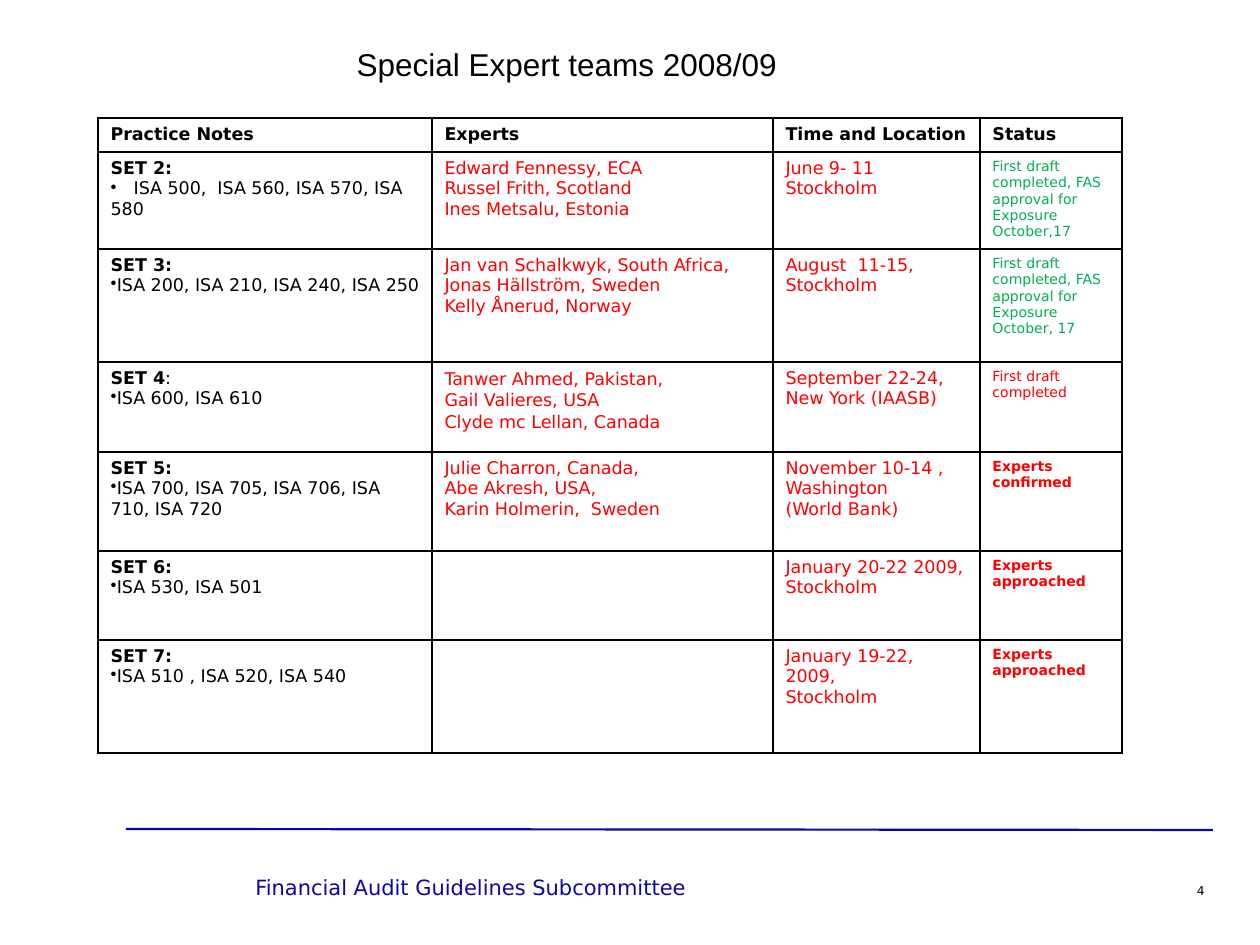
from dataclasses import dataclass
from lxml.etree import SubElement as Sub
from pptx import Presentation
from pptx.dml.color import RGBColor as RGB
from pptx.enum.shapes import MSO_CONNECTOR as Conn
from pptx.enum.text import MSO_ANCHOR as Anchor, MSO_AUTO_SIZE as Auto, PP_ALIGN as Align
from pptx.oxml.ns import qn
from pptx.util import Pt

PX = 914400 // 126


@dataclass(frozen=True)
class Theme:
    black: str = "000000"
    red: str = "FF0000"
    green: str = "00B050"
    navy: str = "0A08A1"
    head: str = "Arial"
    body: str = "DejaVu Sans"
    title: int = 18
    foot: int = 12
    text: int = 10
    note: int = 8
    page: int = 7


T = Theme()
COLS = [334, 341, 207, 142]
ROWS = [34, 97, 113, 90, 99, 89, 113]
HEADS = ["Practice Notes", "Experts", "Time and Location", "Status"]
DRAFT = "First draft completed"
SETS = [
    ("SET 2:", "\tISA 500,  ISA 560, ISA 570, ISA 580",
     ["Edward Fennessy, ECA", "Russel Frith, Scotland", "Ines Metsalu, Estonia"],
     ["June 9- 11 Stockholm"],
     DRAFT + ", FAS approval for Exposure October,17", T.green, False),
    ("SET 3:", "ISA 200, ISA 210, ISA 240, ISA 250",
     ["Jan van Schalkwyk, South Africa,", "Jonas Hällström, Sweden", "Kelly Ånerud, Norway"],
     ["August  11-15,", "Stockholm"],
     DRAFT + ", FAS approval for Exposure October, 17", T.green, False),
    ("SET 4:", "ISA 600, ISA 610",
     ["Tanwer Ahmed, Pakistan,", "Gail Valieres, USA", "Clyde mc Lellan, Canada"],
     ["September 22-24,", "New York (IAASB)"],
     DRAFT, T.red, False),
    ("SET 5:", "ISA 700, ISA 705, ISA 706, ISA 710, ISA 720",
     ["Julie Charron, Canada,", "Abe Akresh, USA,", "Karin Holmerin,  Sweden"],
     ["November 10-14 ,", "Washington", "(World Bank)"],
     "Experts confirmed", T.red, True),
    ("SET 6:", "ISA 530, ISA 501", [],
     ["January 20-22 2009,", "Stockholm"],
     "Experts approached", T.red, True),
    ("SET 7:", "ISA 510 , ISA 520, ISA 540", [],
     ["January 19-22, 2009,", "Stockholm"],
     "Experts approached", T.red, True),
]


def style(para, size, color=T.black, bold=False, face=T.body):
    font = para.font
    font.size, font.bold, font.name = Pt(size), bold, face
    font.color.rgb = RGB.from_string(color)


def fill(frame, lines, size=T.text, color=T.black, bold=False):
    for i, line in enumerate(lines):
        para = frame.add_paragraph() if i else frame.paragraphs[0]
        para.text = line
        style(para, size, color, bold)


def bullet(para):
    props = para._p.get_or_add_pPr()
    props.set("marL", "0")
    props.set("indent", "0")
    Sub(props, qn("a:buChar"), char="•")
    if para.text.startswith("\t"):
        tabs = Sub(props, qn("a:tabLst"))
        Sub(tabs, qn("a:tab"), pos=str(23 * PX), algn="l")


def notes(frame, name, items):
    head = frame.paragraphs[0]
    if name == "SET 4:":
        head.add_run().text = name[:-1]
        colon = head.add_run()
        colon.text = name[-1]
        colon.font.bold = False
    else:
        head.text = name
    style(head, T.text, bold=True)
    para = frame.add_paragraph()
    para.text = items
    bullet(para)
    style(para, T.text)


def frame_cell(cell):
    props = cell._tc.get_or_add_tcPr()
    for side in "LRTB":
        line = Sub(props, qn("a:ln" + side), w=str(Pt(1)))
        Sub(Sub(line, qn("a:solidFill")), qn("a:srgbClr"), val=T.black)
    cell.fill.background()


def add_grid(slide):
    grid = slide.shapes.add_table(len(ROWS), len(COLS), 98 * PX, 118 * PX,
                                  sum(COLS) * PX, sum(ROWS) * PX).table
    grid.first_row = grid.horz_banding = False
    for col, wide in zip(grid.columns, COLS):
        col.width = wide * PX
    for row, high in zip(grid.rows, ROWS):
        row.height = high * PX
    for cell in grid.iter_cells():
        frame_cell(cell)
    for c, head in enumerate(HEADS):
        fill(grid.cell(0, c).text_frame, [head], bold=True)
    for r, (name, items, team, time, state, color, bold) in enumerate(SETS, 1):
        cells = [grid.cell(r, c).text_frame for c in range(len(COLS))]
        notes(cells[0], name, items)
        fill(cells[1], team, color=T.red)
        fill(cells[2], time, color=T.red)
        fill(cells[3], [state], T.note, color, bold)
        if name == "SET 4:":
            for para in cells[1].paragraphs:
                para.line_spacing = 1.05


def add_title(slide, text):
    title = slide.shapes.title
    title.left, title.top, title.width, title.height = (n * PX for n in (344, 39, 581, 50))
    frame = title.text_frame
    frame.text = text
    frame.auto_size, frame.vertical_anchor = Auto.NONE, Anchor.TOP
    para = frame.paragraphs[0]
    para.alignment = Align.LEFT
    style(para, T.title, face=T.head)


def add_label(slide, text, place, size, color, align, anchor):
    frame = slide.shapes.add_textbox(*(n * PX for n in place)).text_frame
    frame.word_wrap, frame.vertical_anchor = True, anchor
    fill(frame, [text], size, color)
    frame.paragraphs[0].alignment = align


def add_rule(slide):
    ends = (n * PX for n in (126, 829, 1213, 830))
    rule = slide.shapes.add_connector(Conn.STRAIGHT, *ends)
    rule.line.color.rgb = RGB.from_string(T.navy)
    rule.line.width = Pt(1.25)
    Sub(rule._element.spPr, qn("a:effectLst"))


def main():
    deck = Presentation()
    deck.slide_width, deck.slide_height = 1260 * PX, 945 * PX
    slide = deck.slides.add_slide(deck.slide_layouts[5])
    add_rule(slide)
    add_label(slide, "Financial Audit Guidelines Subcommittee", (243, 868, 745, 38),
              T.foot, T.navy, Align.LEFT, Anchor.MIDDLE)
    add_label(slide, "4", (1077, 877, 140, 38), T.page, T.black, Align.RIGHT, Anchor.TOP)
    add_grid(slide)
    add_title(slide, "Special Expert teams 2008/09")
    deck.save("out.pptx")


if __name__ == "__main__":
    main()
